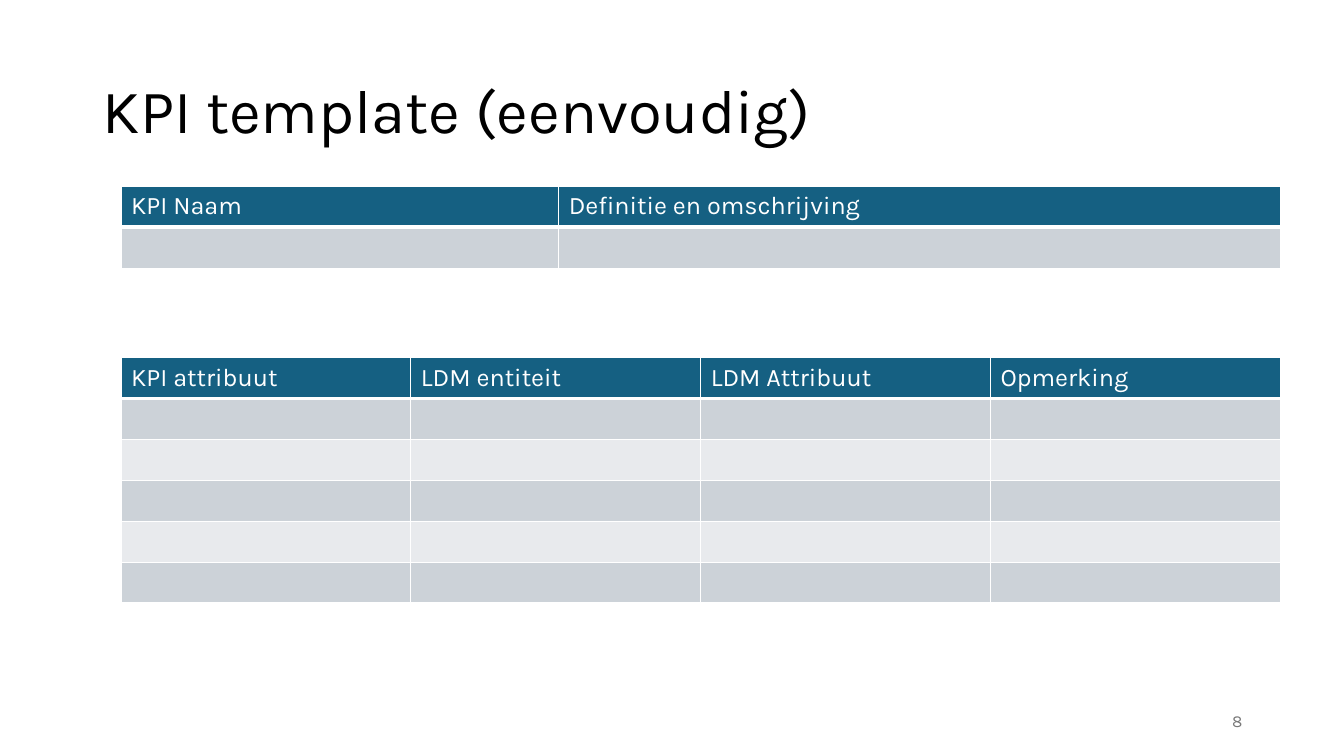
from dataclasses import dataclass

from lxml.etree import SubElement
from pptx import Presentation
from pptx.dml.color import RGBColor
from pptx.enum.text import MSO_ANCHOR, PP_ALIGN
from pptx.oxml.ns import qn
from pptx.util import Inches, Pt


@dataclass(frozen=True)
class Theme:
    font: str = "Karla"
    title_size: int = 44
    table_size: int = 18
    number_size: int = 12
    text: str = "000000"
    muted: str = "797979"
    white: str = "FFFFFF"
    header: str = "156082"
    bands: tuple = ("CCD2D8", "E8EAED")
    thin: int = 1
    thick: int = 3


THEME = Theme()

# Grid, in inches
WIDTH, HEIGHT = 13.33, 7.5
MARGIN = 0.92
CONTENT_WIDTH = 11.5
TABLE_LEFT = 1.2
ROW_HEIGHT = 0.405


def place(shape, left, top, width, height):
    shape.left, shape.top = Inches(left), Inches(top)
    shape.width, shape.height = Inches(width), Inches(height)


def write(text_frame, text, size, color, align=PP_ALIGN.LEFT):
    text_frame.text = text
    paragraph = text_frame.paragraphs[0]
    paragraph.alignment = align
    for run in paragraph.runs:
        run.font.name = THEME.font
        run.font.size = Pt(size)
        run.font.bold = False
        run.font.color.rgb = RGBColor.from_string(color)
    return paragraph


def add_title(slide, text):
    title = slide.shapes.title
    place(title, MARGIN, 0.4, CONTENT_WIDTH, 1.45)
    title.text_frame.vertical_anchor = MSO_ANCHOR.MIDDLE
    paragraph = write(title.text_frame, text, THEME.title_size, THEME.text)
    paragraph.line_spacing = 0.9


def add_slide_number(slide, number):
    width = 3
    box = slide.shapes.add_textbox(0, 0, 0, 0)
    place(box, MARGIN + CONTENT_WIDTH - width, 6.95, width, 0.4)
    box.text_frame.word_wrap = True
    box.text_frame.vertical_anchor = MSO_ANCHOR.MIDDLE
    write(box.text_frame, number, THEME.number_size, THEME.muted, PP_ALIGN.RIGHT)


def set_borders(cell, top, bottom):
    properties = cell._tc.get_or_add_tcPr()
    widths = {"lnL": THEME.thin, "lnR": THEME.thin, "lnT": top, "lnB": bottom}
    for side, width in widths.items():
        line = SubElement(properties, qn(f"a:{side}"), w=str(Pt(width)))
        fill = SubElement(line, qn("a:solidFill"))
        SubElement(fill, qn("a:srgbClr"), val=THEME.white)


def add_banded_table(slide, top, headers, shares, body_rows):
    row_count = body_rows + 1
    frame = slide.shapes.add_table(
        row_count, len(headers), Inches(TABLE_LEFT), Inches(top),
        Inches(CONTENT_WIDTH), Inches(row_count * ROW_HEIGHT))
    table = frame.table
    for column, share in zip(table.columns, shares):
        column.width = Inches(CONTENT_WIDTH * share)
    for index, row in enumerate(table.rows):
        row.height = Inches(ROW_HEIGHT)
        fill = THEME.bands[(index - 1) % 2] if index else THEME.header
        for cell in row.cells:
            # The header is set off from the body by a thicker rule
            set_borders(cell, THEME.thick if index == 1 else THEME.thin,
                        THEME.thin if index else THEME.thick)
            cell.fill.solid()
            cell.fill.fore_color.rgb = RGBColor.from_string(fill)
    for cell, header in zip(table.rows[0].cells, headers):
        write(cell.text_frame, header, THEME.table_size, THEME.white)


def main():
    presentation = Presentation()
    presentation.slide_width = Inches(WIDTH)
    presentation.slide_height = Inches(HEIGHT)
    slide = presentation.slides.add_slide(presentation.slide_layouts[5])

    add_title(slide, "KPI template (eenvoudig)")

    # KPI definition
    add_banded_table(slide, 1.85, ["KPI Naam", "Definitie en omschrijving"],
                     [0.3775, 0.6225], body_rows=1)

    # Mapping of attributes to the logical data model
    add_banded_table(slide, 3.55,
                     ["KPI attribuut", "LDM entiteit", "LDM Attribuut", "Opmerking"],
                     [1 / 4] * 4, body_rows=5)

    add_slide_number(slide, "8")
    presentation.save("out.pptx")


if __name__ == "__main__":
    main()
